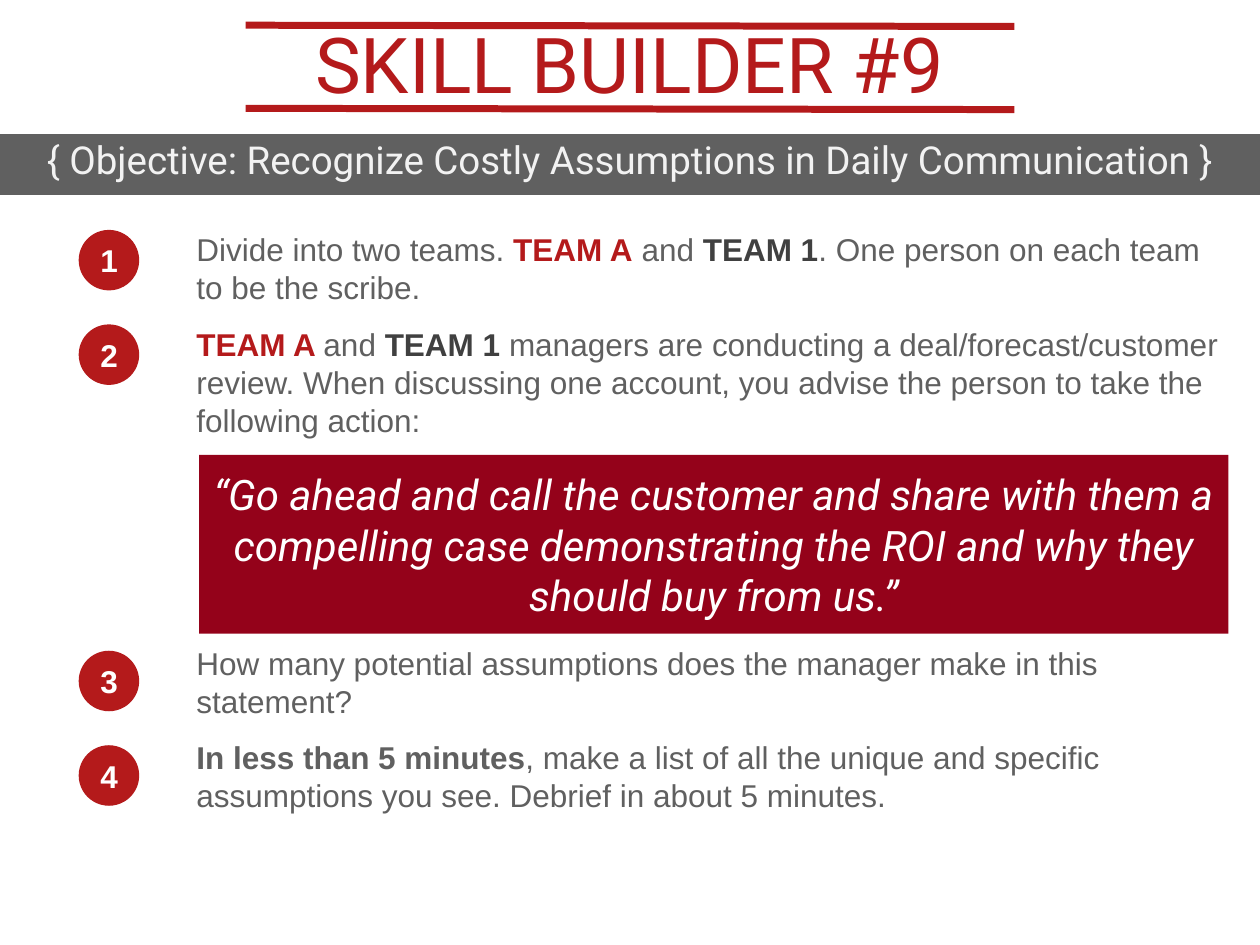
import pptx
import pptx.util
import pptx.dml.color
import pptx.enum.shapes
import pptx.enum.text
import pptx.oxml.ns
import lxml.etree

Inches = pptx.util.Inches
SHAPE = pptx.enum.shapes.MSO_SHAPE
ANCHOR = pptx.enum.text.MSO_ANCHOR
ALIGN = pptx.enum.text.PP_ALIGN

COLORS = {
    "red": "B41A1B",
    "crimson": "94021A",
    "gray": "606060",
    "dark": "404040",
    "pale": "F2F2F2",
    "white": "FFFFFF",
}

# Each step: text top, badge top, text height, runs of (text, color, bold)
STEPS = [
    (1.78, 1.83, 0.71, [
        ("Divide into two teams. ", "gray", False),
        ("TEAM A", "red", True),
        (" and ", "gray", False),
        ("TEAM 1", "dark", True),
        (". One person on each team to be the scribe.", "gray", False),
    ]),
    (2.53, 2.58, 1.01, [
        ("TEAM A ", "red", True),
        ("and ", "gray", False),
        ("TEAM 1 ", "dark", True),
        ("managers are conducting a deal/forecast/customer review. When "
         "discussing one account, you advise the person to take the "
         "following action:", "gray", False),
    ]),
    (5.06, 5.17, 0.71, [
        ("How many potential assumptions does the manager make in this "
         "statement?", "gray", False),
    ]),
    (5.81, 5.92, 0.71, [
        ("In less than 5 minutes", "gray", True),
        (", make a list of all the unique and specific assumptions you see. "
         "Debrief in about 5 minutes.", "gray", False),
    ]),
]


def rgb(color):
    return pptx.dml.color.RGBColor.from_string(COLORS[color])


def write_runs(holder, runs, size, font, align=ALIGN.LEFT, anchor=ANCHOR.TOP,
               italic=False):
    frame = holder.text_frame
    frame.word_wrap = True
    frame.auto_size = pptx.enum.text.MSO_AUTO_SIZE.NONE
    frame.vertical_anchor = anchor
    paragraph = frame.paragraphs[0]
    paragraph.alignment = align
    for text, color, bold in runs:
        run = paragraph.add_run()
        run.text = text
        run.font.name = font
        run.font.size = pptx.util.Pt(size)
        run.font.bold = bold
        run.font.italic = italic
        run.font.color.rgb = rgb(color)


def add_text(slide, box, runs, size, font, align=ALIGN.LEFT):
    label = slide.shapes.add_textbox(*map(Inches, box))
    write_runs(label, runs, size, font, align)


def add_block(slide, kind, box, fill, outline=None):
    block = slide.shapes.add_shape(kind, *map(Inches, box))
    block.shadow.inherit = False
    block.fill.solid()
    block.fill.fore_color.rgb = rgb(fill)
    if outline:
        block.line.color.rgb = rgb(outline)
        block.line.width = pptx.util.Pt(0.75)
    else:
        block.line.fill.background()
    return block


def add_rule(slide, top):
    rule = slide.shapes.add_connector(
        pptx.enum.shapes.MSO_CONNECTOR.STRAIGHT,
        Inches(1.95), Inches(top), Inches(8.05), Inches(top + 0.01))
    rule.line.color.rgb = rgb("red")
    rule.line.width = pptx.util.Pt(4)
    lxml.etree.SubElement(rule._element.spPr, pptx.oxml.ns.qn("a:effectLst"))


def add_title(slide, text):
    title = slide.shapes.title
    title.left, title.top, title.width, title.height = map(
        Inches, (0, 0.08, 10, 0.84))
    write_runs(title, [(text, "red", False)], 44, "Roboto", ALIGN.CENTER)


def add_step(slide, number, text_top, badge_top, height, runs):
    badge = add_block(slide, SHAPE.OVAL, (0.63, badge_top, 0.47, 0.47),
                      "red", "red")
    write_runs(badge, [(str(number), "white", True)], 18, "Arial",
               ALIGN.CENTER, ANCHOR.MIDDLE)
    add_text(slide, (1.46, text_top, 8.35, height), runs, 18, "Arial")


def main():
    deck = pptx.Presentation()
    deck.slide_width, deck.slide_height = Inches(10), Inches(7.5)
    slide = deck.slides.add_slide(deck.slide_layouts[5])

    # Title between two rules
    add_title(slide, "SKILL BUILDER #9")
    for top in (0.2, 0.86):
        add_rule(slide, top)

    # Objective banner
    add_block(slide, SHAPE.RECTANGLE, (0, 1.07, 10, 0.47), "gray", "gray")
    objective = ("{ Objective: Recognize Costly Assumptions in Daily "
                 "Communication }")
    add_text(slide, (0, 1.03, 10, 0.47), [(objective, "pale", False)],
             22, "Roboto", ALIGN.CENTER)

    # Numbered steps
    for number, step in enumerate(STEPS, start=1):
        add_step(slide, number, *step)

    # Quoted advice
    advice = add_block(slide, SHAPE.RECTANGLE, (1.58, 3.61, 8.17, 1.42),
                       "crimson")
    quote = ("“Go ahead and call the customer and share with them a "
             "compelling case demonstrating the ROI and why they should "
             "buy from us.”")
    write_runs(advice, [(quote, "white", False)], 24, "Roboto",
               ALIGN.CENTER, ANCHOR.MIDDLE, italic=True)

    deck.save("out.pptx")


if __name__ == "__main__":
    main()
